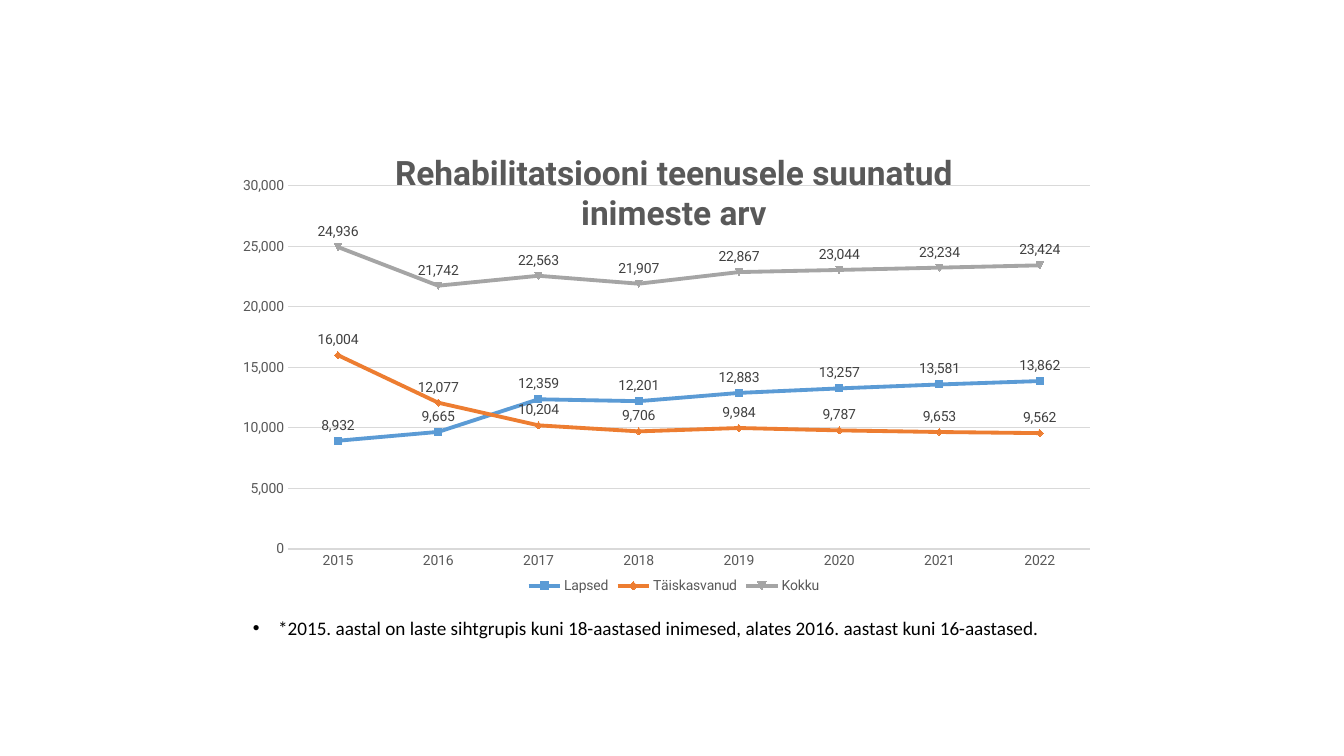
from dataclasses import dataclass

from lxml.etree import SubElement
from pptx import Presentation
from pptx.chart.data import CategoryChartData
from pptx.dml.color import RGBColor
from pptx.enum.chart import XL_CHART_TYPE, XL_LABEL_POSITION, XL_LEGEND_POSITION, XL_TICK_MARK
from pptx.oxml.ns import qn
from pptx.util import Inches, Pt


@dataclass(frozen=True)
class Theme:
    """Colours, fonts and type sizes of the slide."""
    chart_font: str = "Roboto"
    note_font: str = "Calibri"
    title_size: float = 24
    chart_size: float = 10
    note_size: float = 13.7
    ink: str = "000000"
    muted: str = "595959"
    label: str = "404040"
    rule: str = "D9D9D9"


THEME = Theme()
TITLE = "Rehabilitatsiooni teenusele suunatud inimeste arv"
NOTE = ("*2015. aastal on laste sihtgrupis kuni 18-aastased inimesed, "
        "alates 2016. aastast kuni 16-aastased.")
YEARS = [str(year) for year in range(2015, 2023)]
GROUPS = [
    ("Lapsed", "5B9BD5", [8932, 9665, 12359, 12201, 12883, 13257, 13581, 13862]),
    ("Täiskasvanud", "ED7D31", [16004, 12077, 10204, 9706, 9984, 9787, 9653, 9562]),
    ("Kokku", "A5A5A5", [24936, 21742, 22563, 21907, 22867, 23044, 23234, 23424]),
]
PLOT_SHARES = {"x": 0.05, "y": 0.12, "w": 0.94, "h": 0.78}
PLOT_SHARES = {"x": 0.048, "y": 0.121, "w": 0.939, "h": 0.775}
LEFT, WIDTH = 18.08, 63.84
NUMBER_FORMAT = "#,##0"


def place(deck, left, top, width, height):
    """Turn percentages of the slide into lengths."""
    across, down = deck.slide_width / 100, deck.slide_height / 100
    return [round(length) for length in (left * across, top * down, width * across, height * down)]


def style_font(font, name, size, color, bold=False):
    """Set the family, size, colour and weight of a font."""
    font.name, font.size, font.bold = name, Pt(size), bold
    font.color.rgb = RGBColor.from_string(color)


def style_line(line, color, width):
    """Set the colour and width of a line."""
    line.color.rgb = RGBColor.from_string(color)
    line.width = Pt(width)


def add_note(slide, box):
    """Add the bulleted footnote."""
    frame = slide.shapes.add_textbox(*box).text_frame
    frame.word_wrap = True
    note = frame.paragraphs[0]
    note.text = NOTE
    note.line_spacing = 0.9
    note.space_before = Pt(10)
    style_font(note.font, THEME.note_font, THEME.note_size, THEME.ink)
    properties = note._p.get_or_add_pPr()
    properties.set("marL", str(Inches(0.25)))
    properties.set("indent", str(Inches(-0.25)))
    bullet_font = properties.makeelement(qn("a:buFont"), {"typeface": "Arial"})
    bullet = properties.makeelement(qn("a:buChar"), {"char": "•"})
    defaults = properties.find(qn("a:defRPr"))
    defaults.addprevious(bullet_font)
    defaults.addprevious(bullet)


def fix_plot_area(chart):
    """Pin the inner plot area to its shares of the chart."""
    plot_area = chart.element.find(".//" + qn("c:plotArea"))
    for automatic in plot_area.findall(qn("c:layout")):
        plot_area.remove(automatic)
    layout = plot_area.makeelement(qn("c:layout"), {})
    plot_area.insert(0, layout)
    manual = SubElement(layout, qn("c:manualLayout"))
    SubElement(manual, qn("c:layoutTarget"), val="inner")
    for side in "xy":
        SubElement(manual, qn(f"c:{side}Mode"), val="edge")
    for side, share in PLOT_SHARES.items():
        SubElement(manual, qn(f"c:{side}"), val=str(share))


def style_axes(chart):
    """Style both axes and the horizontal grid."""
    years, people = chart.category_axis, chart.value_axis
    for axis in (years, people):
        axis.major_tick_mark = axis.minor_tick_mark = XL_TICK_MARK.NONE
        style_font(axis.tick_labels.font, THEME.chart_font, THEME.chart_size, THEME.muted)
    style_line(years.format.line, THEME.rule, 1)
    people.format.line.fill.background()
    people.minimum_scale, people.maximum_scale, people.major_unit = 0, 30000, 5000
    people.tick_labels.number_format = NUMBER_FORMAT
    people.tick_labels.number_format_is_linked = False
    people.has_major_gridlines = True
    style_line(people.major_gridlines.format.line, THEME.rule, 0.75)


def style_series(series, color):
    """Style one line and the values above it."""
    series.smooth = False
    series.marker.style = None
    style_line(series.format.line, color, 2.75)
    labels = series.data_labels
    labels.show_value = True
    labels.position = XL_LABEL_POSITION.ABOVE
    labels.number_format = NUMBER_FORMAT
    labels.number_format_is_linked = False
    style_font(labels.font, THEME.chart_font, THEME.chart_size, THEME.label)


def add_people_chart(slide, box):
    """Add the line chart of people referred each year."""
    data = CategoryChartData(number_format=NUMBER_FORMAT)
    data.categories = YEARS
    for name, _, counts in GROUPS:
        data.add_series(name, counts)
    chart = slide.shapes.add_chart(XL_CHART_TYPE.LINE, *box, data).chart
    style_font(chart.font, THEME.chart_font, THEME.chart_size, THEME.ink)
    chart.has_title = True
    heading = chart.chart_title.text_frame.paragraphs[0]
    heading.text = TITLE
    style_font(heading.font, THEME.chart_font, THEME.title_size, THEME.muted, bold=True)
    chart.has_legend = True
    chart.legend.position = XL_LEGEND_POSITION.BOTTOM
    chart.legend.include_in_layout = False
    style_font(chart.legend.font, THEME.chart_font, THEME.chart_size, THEME.muted)
    style_axes(chart)
    plot = chart.plots[0]
    plot.vary_by_categories = False
    for series, (_, color, _) in zip(plot.series, GROUPS):
        style_series(series, color)
    fix_plot_area(chart)


def main():
    """Build and save the slide."""
    deck = Presentation()
    deck.slide_width, deck.slide_height = Inches(13.33), Inches(7.5)
    slide = deck.slides.add_slide(deck.slide_layouts[6])
    add_note(slide, place(deck, LEFT, 81.2, WIDTH, 4.53))
    add_people_chart(slide, place(deck, LEFT, 17.07, WIDTH, 62))
    deck.save("out.pptx")


if __name__ == "__main__":
    main()
